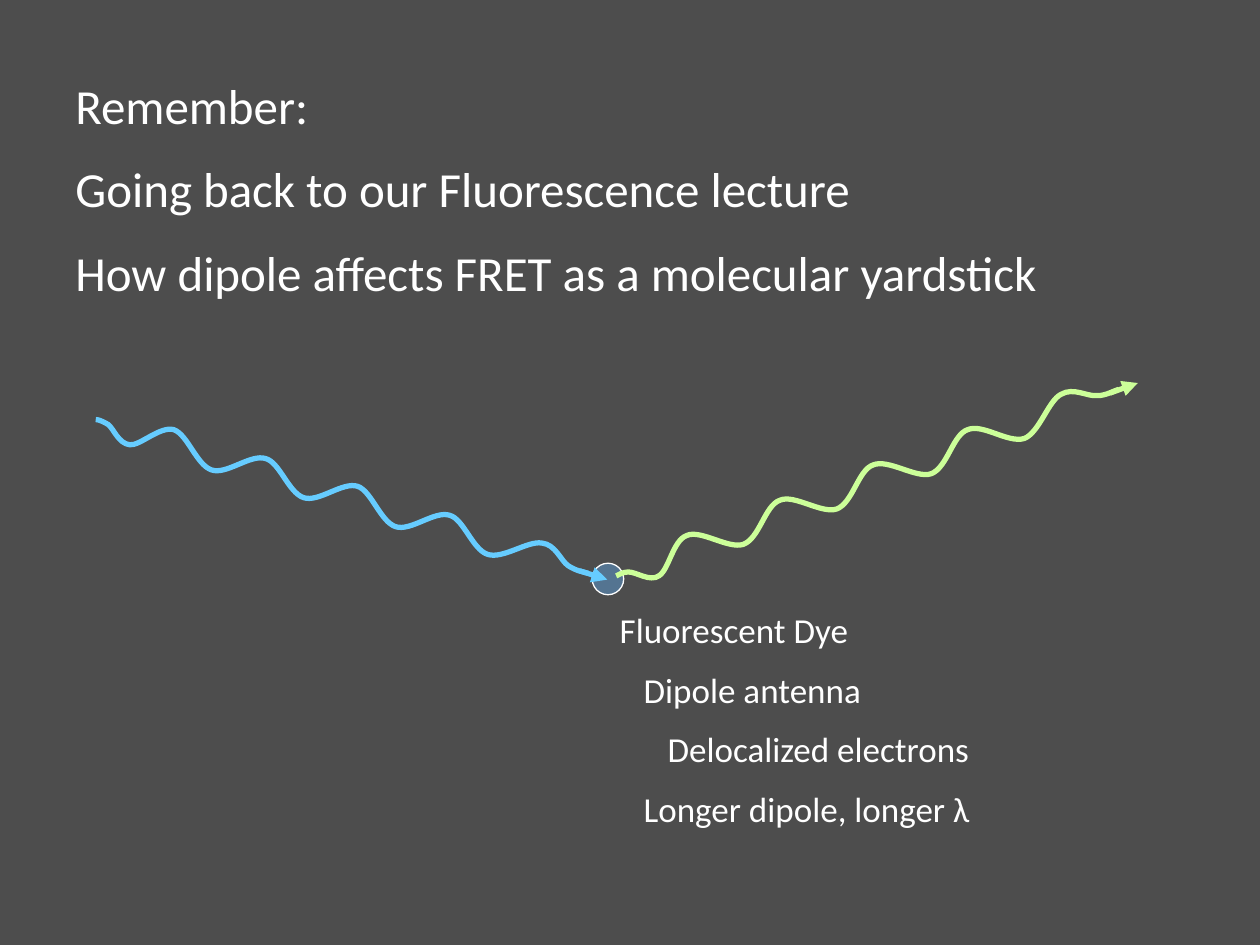
"""Builds a slide showing how a dye absorbs one light wave and emits another."""
from lxml import etree
from pptx import Presentation, util as u
from pptx.dml.color import RGBColor
from pptx.enum import shapes, text
from pptx.oxml.ns import qn

PX = u.Inches(0.01)


def paint(color_format, value):
    color_format.rgb = RGBColor.from_string(value)


def add_text(slide, left, top, width, height, size, lines):
    box = slide.shapes.add_textbox(left * PX, top * PX, width * PX, height * PX)
    frame = box.text_frame
    frame.word_wrap = True
    frame.auto_size = text.MSO_AUTO_SIZE.SHAPE_TO_FIT_TEXT
    frame.vertical_anchor = text.MSO_ANCHOR.MIDDLE
    for index, (indent, words) in enumerate(lines):
        paragraph = frame.add_paragraph() if index else frame.paragraphs[0]
        properties = paragraph._p.get_or_add_pPr()
        properties.set("marL", str(indent * PX))
        spacing = etree.SubElement(properties, qn("a:spcBef"))
        etree.SubElement(spacing, qn("a:spcPct"), val="50000")
        run = paragraph.add_run()
        run.text = words
        run.font.name = "Calibri"
        run.font.size = u.Pt(size)
        paint(run.font.color, "FFFFFF")


presentation = Presentation()
presentation.slide_width, presentation.slide_height = 1000 * PX, 750 * PX
slide = presentation.slides.add_slide(presentation.slide_layouts[6])
slide.background.fill.solid()
paint(slide.background.fill.fore_color, "4D4D4D")

dye = slide.shapes.add_shape(shapes.MSO_SHAPE.OVAL, 470 * PX, 447 * PX, 25 * PX, 25 * PX)
dye.shadow.inherit = False
dye.fill.solid()
paint(dye.fill.fore_color, "5B9BD5")
dye_color = dye._element.spPr.find(qn("a:solidFill"))[0]
etree.SubElement(dye_color, qn("a:alpha"), val="50000")
paint(dye.line.color, "FFFFFF")
dye.line.width = u.Pt(0.75)

waves = [
    {
        "color": "66CCFF",
        "start": [(76, 333), (78, 333), (81, 334), (86, 337), (90, 340), (94, 352), (103, 353),
                  (111, 354), (127, 338), (138, 341)],
        "cycle": [(149, 345), (156, 369), (168, 373), (180, 377), (199, 360), (211, 364)],
        "step": (73, 22.33),
        "end": [(368, 412), (375, 436), (387, 440), (399, 444), (419, 429), (430, 431),
                (441, 432), (445, 445), (451, 449), (457, 453), (463, 454), (467, 455)],
        "arrow": (460, 453, 482, 460),
    },
    {
        "color": "CCFF99",
        "start": [(489, 457), (490, 457), (493, 454), (499, 454), (505, 454), (516, 462), (523, 457),
                  (531, 452), (534, 429), (545, 425)],
        "cycle": [(556, 420), (578, 436), (590, 432), (603, 427), (607, 401), (619, 397)],
        "step": (74.33, -28),
        "end": [(780, 336), (800, 352), (813, 348), (825, 343), (832, 318), (842, 313),
                (852, 307), (863, 315), (871, 314), (878, 314), (884, 310), (888, 309)],
        "arrow": (881, 312, 903, 304),
    },
]

for wave in waves:
    step_x, step_y = wave["step"]
    cycles = [(round(x + turn * step_x), round(y + turn * step_y))
              for turn in range(3) for x, y in wave["cycle"]]
    points = wave["start"] + cycles + wave["end"]
    builder = slide.shapes.build_freeform(*points[0], scale=PX)
    builder.add_line_segments(points[1:], close=False)
    curve = builder.convert_to_shape()
    curve.shadow.inherit = False
    curve.fill.background()

    outline = next(curve._element.iter(qn("a:path")))
    segments = outline.findall(qn("a:lnTo"))
    for first in range(0, len(segments), 3):
        bezier = etree.SubElement(outline, qn("a:cubicBezTo"))
        for segment in segments[first:first + 3]:
            bezier.append(segment[0])
            outline.remove(segment)

    arrow = slide.shapes.add_connector(
        shapes.MSO_CONNECTOR.STRAIGHT, *[value * PX for value in wave["arrow"]])
    for shape in (curve, arrow):
        paint(shape.line.color, wave["color"])
        shape.line.width = u.Pt(3)
    arrow_properties = arrow._element.spPr
    etree.SubElement(arrow_properties.find(qn("a:ln")), qn("a:tailEnd"), type="triangle")
    etree.SubElement(arrow_properties, qn("a:effectLst"))

add_text(slide, 50, 50, 825, 199, 28, [
    (0, "Remember:"),
    (0, "Going back to our Fluorescence lecture"),
    (0, "How dipole affects FRET as a molecular yardstick"),
])
add_text(slide, 482, 473, 474, 195, 20, [
    (0, "Fluorescent Dye"),
    (19, "Dipole antenna"),
    (38, "Delocalized electrons"),
    (19, "Longer dipole, longer λ"),
])

presentation.save("out.pptx")
